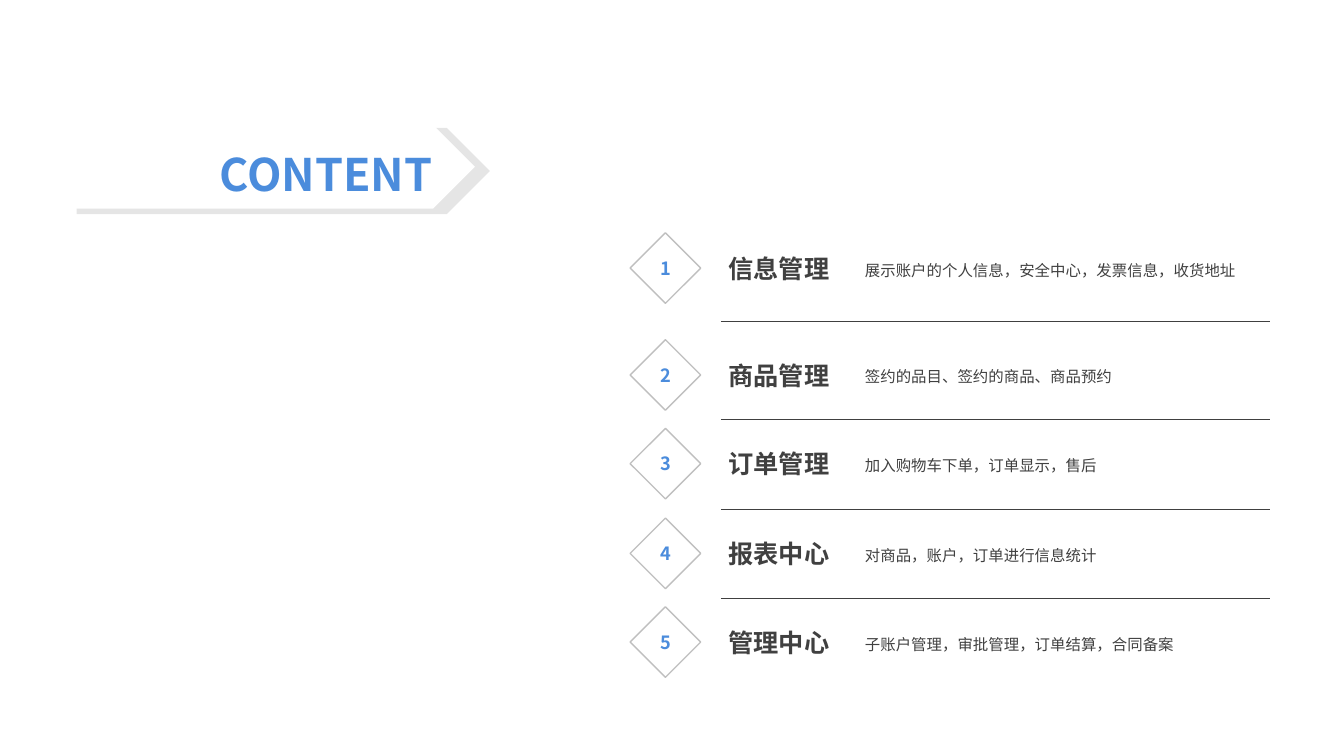
import pptx
import pptx.dml.color
import pptx.enum.shapes
import pptx.enum.text
import pptx.oxml
import pptx.oxml.ns
import pptx.util

SHAPE = pptx.enum.shapes.MSO_SHAPE
ALIGN = pptx.enum.text.PP_ALIGN
ANCHOR = pptx.enum.text.MSO_ANCHOR


def color(hex_string):
    return pptx.dml.color.RGBColor.from_string(hex_string)


def px(length):
    """100 px to the inch."""
    return pptx.util.Emu(length * 9144)


class SlideBuilder:
    font = "Noto Sans CJK SC"
    blue, dark, gray, white = "4B8CDC", "404040", "BFBFBF", "FFFFFF"

    def __init__(self, slide):
        self.shapes = slide.shapes

    def shape(self, kind, left, top, width, height, line=None):
        shape = self.shapes.add_shape(kind, px(left), px(top), px(width), px(height))
        shape.shadow.inherit = False
        shape.fill.solid()
        shape.fill.fore_color.rgb = color(self.white)
        if line:
            shape.line.color.rgb = color(line)
            shape.line.width = pptx.util.Pt(1)
        else:
            shape.line.fill.background()
        return shape

    def offset_shadow(self, shape):
        """Pale, slightly enlarged shadow toward the lower right."""
        effects = shape._element.spPr.find(pptx.oxml.ns.qn("a:effectLst"))
        effects.append(pptx.oxml.parse_xml(
            f'<a:outerShdw {pptx.oxml.ns.nsdecls("a")} blurRad="0" dist="38100" '
            'dir="2700000" sx="103000" sy="103000" algn="tl" rotWithShape="0">'
            '<a:srgbClr val="000000"><a:alpha val="10000"/></a:srgbClr></a:outerShdw>'))

    def label(self, shape, text, size, hex_string, bold=False,
              align=ALIGN.LEFT, anchor=ANCHOR.MIDDLE, spacing=None):
        frame = shape.text_frame
        frame.word_wrap = True
        frame.vertical_anchor = anchor
        para = frame.paragraphs[0]
        para.text = text
        para.alignment = align
        if spacing:
            para.line_spacing = spacing
        para.font.size = pptx.util.Pt(size)
        para.font.bold = bold
        para.font.name = self.font
        para.font.color.rgb = color(hex_string)
        # East Asian glyphs take the same typeface
        properties = para._p.pPr.find(pptx.oxml.ns.qn("a:defRPr"))
        properties.append(pptx.oxml.parse_xml(
            f'<a:ea {pptx.oxml.ns.nsdecls("a")} typeface="{self.font}"/>'))

    def text(self, left, top, width, height, text, size, hex_string, **style):
        box = self.shapes.add_textbox(px(left), px(top), px(width), px(height))
        self.label(box, text, size, hex_string, **style)

    def rule(self, left, right, y):
        line = self.shapes.add_connector(
            pptx.enum.shapes.MSO_CONNECTOR.STRAIGHT, px(left), px(y), px(right), px(y))
        line.line.color.rgb = color(self.dark)
        line.line.width = pptx.util.Pt(0.25)
        line._element.spPr.append(pptx.oxml.parse_xml(
            f'<a:effectLst {pptx.oxml.ns.nsdecls("a")}/>'))


TOPICS = [
    ("信息管理", "展示账户的个人信息，安全中心，发票信息，收货地址"),
    ("商品管理", "签约的品目、签约的商品、商品预约"),
    ("订单管理", "加入购物车下单，订单显示，售后"),
    ("报表中心", "对商品，账户，订单进行信息统计"),
    ("管理中心", "子账户管理，审批管理，订单结算，合同备案"),
]


def main():
    deck = pptx.Presentation()
    deck.slide_width, deck.slide_height = px(1333), px(750)
    page = SlideBuilder(deck.slides.add_slide(deck.slide_layouts[6]))

    # Heading arrow
    arrow = page.shape(SHAPE.PENTAGON, 73, 124, 398, 83)
    page.offset_shadow(arrow)

    # Topics: the first stands apart, the others are evenly spaced
    tops = [231] + [round(337 + 88.4 * step) for step in range(4)]
    for number, (top, (title, detail)) in enumerate(zip(tops, TOPICS), 1):
        diamond = page.shape(SHAPE.DIAMOND, 625, top, 70, 70, line=page.gray)
        page.label(diamond, str(number), 13, page.blue, bold=True, align=ALIGN.CENTER)
        page.text(848, top + 14, 412, 42, detail, 11, page.dark, spacing=1.2)
        page.text(696, top + 14, 153, 42, title, 18, page.dark,
                  bold=True, align=ALIGN.CENTER)

    # Rules above topics 2 to 5
    for gap, top in zip([18, 9, 9, 9], tops[1:]):
        page.rule(715, 1260, top - gap)

    # Heading
    page.text(138, 141, 301, 64, "CONTENT", 32, page.blue,
              bold=True, align=ALIGN.RIGHT, anchor=ANCHOR.TOP)

    deck.save("out.pptx")


if __name__ == "__main__":
    main()
